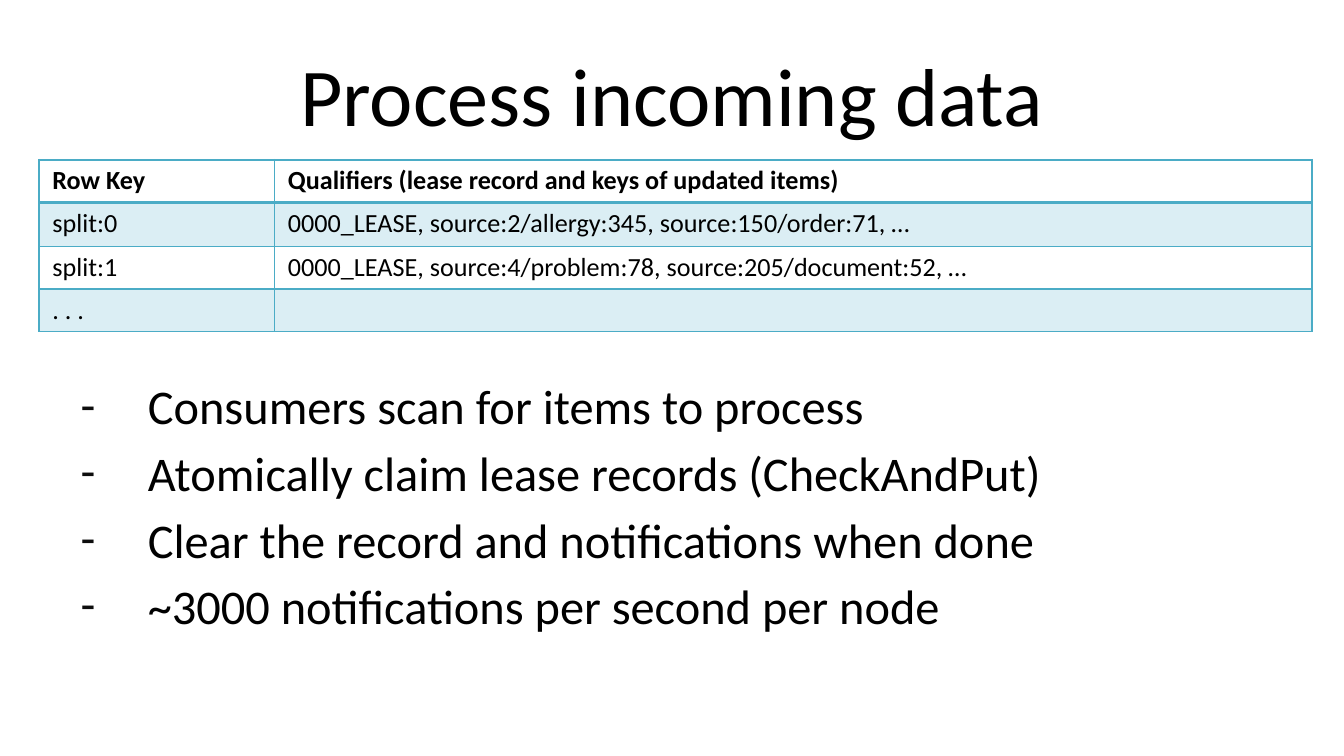
from lxml.etree import SubElement
from pptx import Presentation
from pptx.dml.color import RGBColor
from pptx.enum.text import MSO_ANCHOR, MSO_AUTO_SIZE, PP_ALIGN
from pptx.oxml.ns import qn
from pptx.util import Cm, Pt

COLORS = {"text": "000000", "bullet": "0D0D0D", "line": "4BACC6",
          "band": "DBEEF4", "back": "FFFFFF"}
ROWS = [
    ("Row Key", "Qualifiers (lease record and keys of updated items)"),
    ("split:0", "0000_LEASE, source:2/allergy:345, source:150/order:71, …"),
    ("split:1", "0000_LEASE, source:4/problem:78, source:205/document:52, …"),
    (". . .", ""),
]
POINTS = [
    "Consumers scan for items to process",
    "Atomically claim lease records (CheckAndPut)",
    "Clear the record and notifications when done",
    "~3000 notifications per second per node",
]


def color(name):
    """Return the named colour."""
    return RGBColor.from_string(COLORS[name])


def style(para, size, bold=False):
    """Set the font of a paragraph."""
    font = para.font
    font.name, font.size, font.bold = "Calibri", Pt(size), bold
    font.color.rgb = color("text")


def place(shape, box):
    """Move a shape to a box given in centimetres."""
    shape.left, shape.top, shape.width, shape.height = map(Cm, box)


def edge(cell, side, width):
    """Draw one border of a cell."""
    line = SubElement(cell._tc.get_or_add_tcPr(), qn(f"a:{side}"), w=str(Pt(width)))
    fill = SubElement(line, qn("a:solidFill"))
    SubElement(fill, qn("a:srgbClr"), val=COLORS["line"])


def dash(para):
    """Give a paragraph a dash bullet and a hanging indent."""
    props = para._p.get_or_add_pPr()
    props.set("marL", str(Cm(1.27)))
    props.set("indent", str(Cm(-1.27)))
    tint = SubElement(props, qn("a:buClr"))
    SubElement(tint, qn("a:srgbClr"), val=COLORS["bullet"])
    SubElement(props, qn("a:buFont"), typeface="Calibri")
    SubElement(props, qn("a:buChar"), char="-")


def title(slide, box):
    """Place the slide title."""
    shape = slide.shapes.title
    place(shape, box)
    frame = shape.text_frame
    frame.text = "Process incoming data"
    frame.auto_size = MSO_AUTO_SIZE.NONE
    frame.vertical_anchor = MSO_ANCHOR.MIDDLE
    para = frame.paragraphs[0]
    para.alignment = PP_ALIGN.CENTER
    style(para, 44)


def grid(slide, box):
    """Place the table of row keys and qualifiers."""
    table = slide.shapes.add_table(len(ROWS), 2, *map(Cm, box)).table
    table.first_row = table.horz_banding = False
    table.columns[0].width = Cm(4.45)
    table.columns[1].width = Cm(box[2] - 4.45)
    for r, texts in enumerate(ROWS):
        table.rows[r].height = Cm(0.84 if r == 1 else 0.79)
        for c, text in enumerate(texts):
            cell = table.cell(r, c)
            cell.text = text
            cell.margin_left = cell.margin_right = Cm(0.25)
            cell.margin_top = cell.margin_bottom = Cm(0.1)
            style(cell.text_frame.paragraphs[0], 14, r == 0)
            for side in ("lnL", "lnR", "lnT", "lnB"):
                heavy = (r, side) in ((0, "lnB"), (1, "lnT"))
                edge(cell, side, 2 if heavy else 1)
            cell.fill.solid()
            cell.fill.fore_color.rgb = color("band" if r % 2 else "back")


def points(slide, box):
    """Place the list of processing steps."""
    shape = slide.placeholders[1]
    place(shape, box)
    frame = shape.text_frame
    frame.text = "\n".join(POINTS)
    frame.auto_size = MSO_AUTO_SIZE.NONE
    for para in frame.paragraphs:
        para.space_before = Pt(4.6)
        dash(para)
        style(para, 25.9)


def main():
    """Build and save the slide."""
    deck = Presentation()
    deck.slide_width, deck.slide_height = Cm(25.4), Cm(14.29)
    slide = deck.slides.add_slide(deck.slide_layouts[1])
    title(slide, (1.27, 0.58, 22.86, 2.39))
    points(slide, (1.27, 6.99, 22.86, 5.08))
    grid(slide, (0.74, 3.02, 24.05, 3.23))
    deck.save("out.pptx")


if __name__ == "__main__":
    main()
